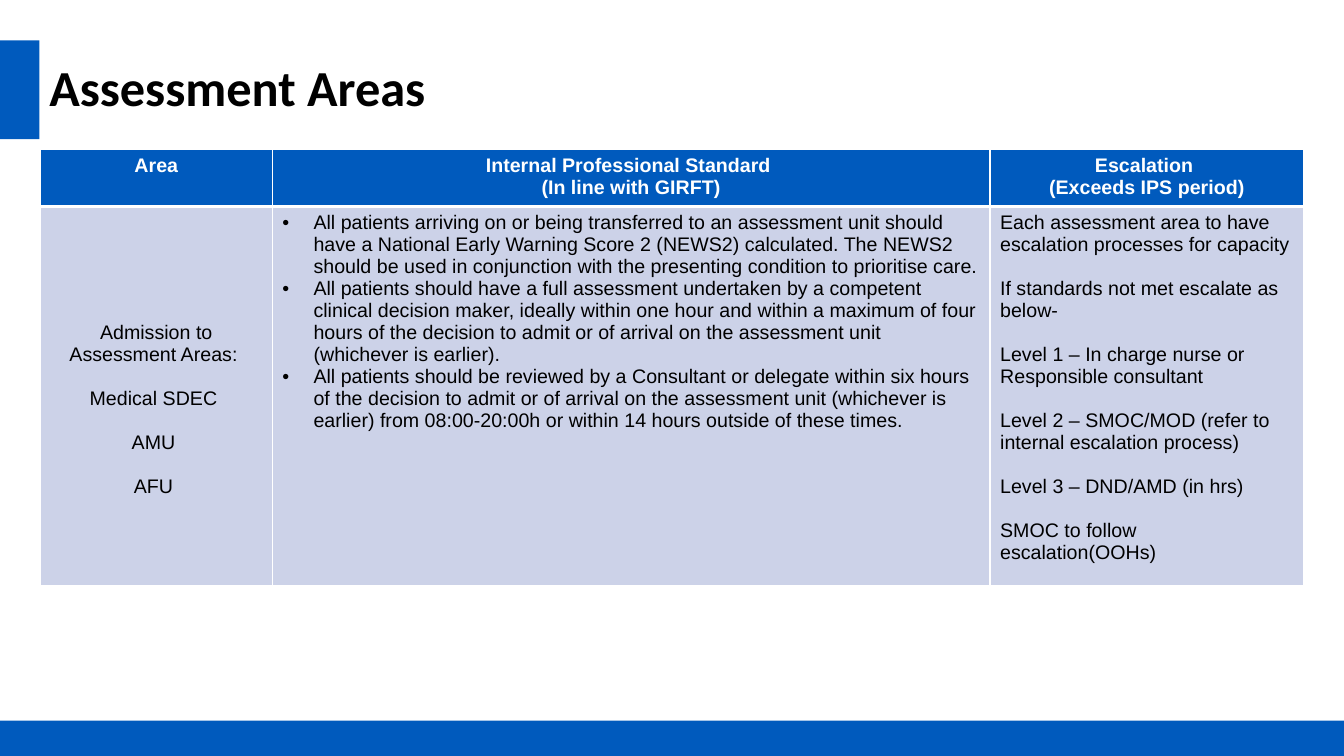
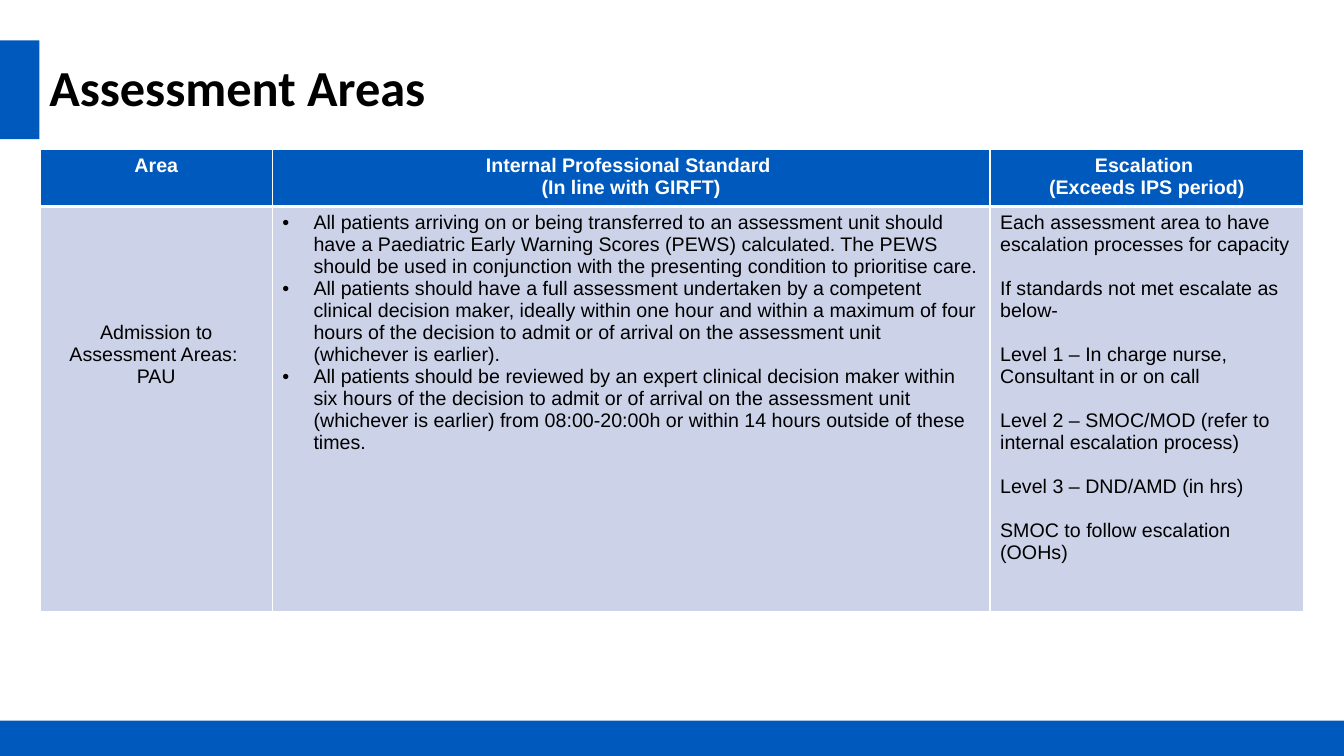
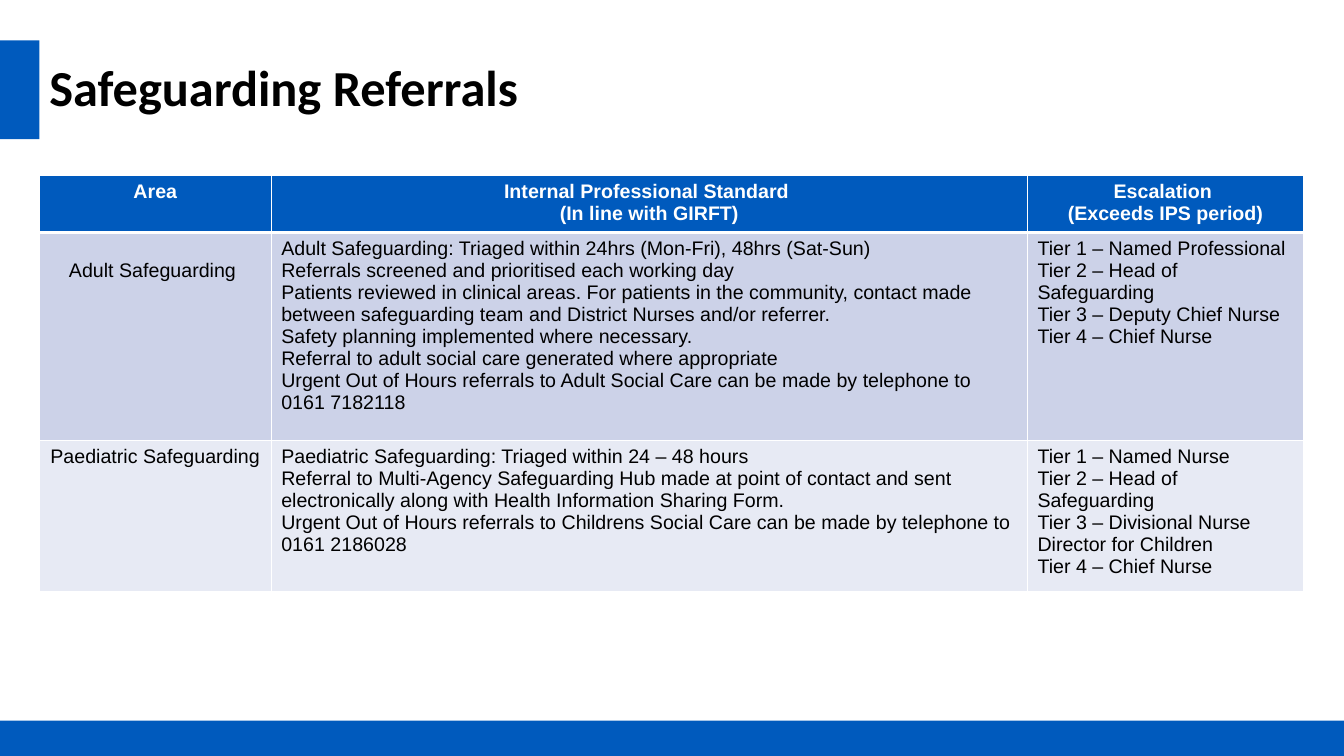
from dataclasses import dataclass
from lxml.etree import SubElement
from pptx import Presentation
from pptx.dml.color import RGBColor
from pptx.enum.shapes import MSO_SHAPE
from pptx.enum.text import MSO_ANCHOR, PP_ALIGN
from pptx.oxml.ns import qn
from pptx.util import Inches, Pt

BLUE = RGBColor(0x00, 0x5A, 0xBD)
LILAC = RGBColor(0xCC, 0xD2, 0xE8)
PALE = RGBColor(0xE7, 0xEA, 0xF4)
WHITE = RGBColor(0xFF, 0xFF, 0xFF)
BLACK = RGBColor(0x00, 0x00, 0x00)

SLIDE_W, SLIDE_H = 13.33, 7.5
TITLE_TOP, TITLE_H = 0.4, 0.98
TAB_W = 0.39
FOOTER_H = 0.35
HEADER_H = 0.54
LINE_PT = 15.75
INSET = 0.05
INDENT = 0.31


@dataclass
class Entry:
    lines: list
    centred: bool = False
    bulleted: bool = False
    spaced: bool = False
    lines_down: int = 0


HEADER = [
    Entry(["Area"], centred=True),
    Entry(["Internal Professional Standard ", "(In line with GIRFT)"], centred=True),
    Entry(["Escalation ", "(Exceeds IPS period)"], centred=True),
]


def add_run(p, text, size, font, color, bold):
    r = p.add_run()
    r.text = text
    r.font.size = Pt(size)
    r.font.name = font
    r.font.color.rgb = color
    r.font.bold = bold


def add_band(slide, left, top, width, height):
    sp = slide.shapes.add_shape(MSO_SHAPE.RECTANGLE, Inches(left), Inches(top),
                                Inches(width), Inches(height))
    sp.shadow.inherit = False
    sp.fill.solid()
    sp.fill.fore_color.rgb = BLUE
    sp.line.fill.background()


def add_titled_slide(prs, title):
    slide = prs.slides.add_slide(prs.slide_layouts[6])
    add_band(slide, 0, TITLE_TOP, TAB_W, TITLE_H)
    add_band(slide, 0, SLIDE_H - FOOTER_H, SLIDE_W, FOOTER_H)
    box = slide.shapes.add_textbox(Inches(TAB_W), Inches(TITLE_TOP),
                                   Inches(10.78), Inches(TITLE_H))
    tf = box.text_frame
    tf.word_wrap = True
    tf.vertical_anchor = MSO_ANCHOR.MIDDLE
    p = tf.paragraphs[0]
    p.line_spacing = 0.9
    add_run(p, title, 36, "Calibri", BLACK, True)
    return slide


def set_borders(cell, bottom_pt):
    tcPr = cell._tc.get_or_add_tcPr()
    for side, width in (("L", 1), ("R", 1), ("T", 1), ("B", bottom_pt)):
        ln = SubElement(tcPr, qn(f"a:ln{side}"), w=str(Pt(width)))
        fill = SubElement(ln, qn("a:solidFill"))
        SubElement(fill, qn("a:srgbClr"), val=str(WHITE))


def set_bullet(p):
    pPr = p._p.get_or_add_pPr()
    pPr.set("marL", str(Inches(INDENT)))
    pPr.set("indent", str(-Inches(INDENT)))
    SubElement(pPr, qn("a:buFont"), typeface="Arial")
    SubElement(pPr, qn("a:buChar"), char="•")


def fill_cell(cell, entry, fill, is_header):
    set_borders(cell, 3 if is_header else 1)
    cell.fill.solid()
    cell.fill.fore_color.rgb = fill
    cell.margin_top = Inches(INSET) + Pt(LINE_PT * entry.lines_down)
    tf = cell.text_frame
    for i, line in enumerate(entry.lines):
        p = tf.add_paragraph() if i else tf.paragraphs[0]
        p.alignment = PP_ALIGN.CENTER if entry.centred else PP_ALIGN.LEFT
        if entry.spaced and i:
            p.space_before = Pt(LINE_PT)
        if entry.bulleted:
            set_bullet(p)
        add_run(p, line, 14, "Arial", WHITE if is_header else BLACK, is_header)


def add_standards_table(slide, left, top, col_widths, body_heights, body):
    heights = [HEADER_H, *body_heights]
    frame = slide.shapes.add_table(len(heights), len(col_widths), Inches(left), Inches(top),
                                   Inches(sum(col_widths)), Inches(sum(heights)))
    table = frame.table
    table.horz_banding = False
    for col, width in zip(table.columns, col_widths):
        col.width = Inches(width)
    fills = [BLUE, LILAC, PALE]
    for n, entries in enumerate([HEADER, *body]):
        table.rows[n].height = Inches(heights[n])
        for cell, entry in zip(table.rows[n].cells, entries):
            fill_cell(cell, entry, fills[n], n == 0)


def assessment_standards(score, score_short, reviewer):
    return Entry([
        "All patients arriving on or being transferred to an assessment unit should have a "
        f"{score} ({score_short}) calculated. The {score_short} should be used in conjunction "
        "with the presenting condition to prioritise care.",
        "All patients should have a full assessment undertaken by a competent clinical decision "
        "maker, ideally within one hour and within a maximum of four hours of the decision to "
        "admit or of arrival on the assessment unit (whichever is earlier).",
        f"All patients should be reviewed by {reviewer} within six hours of the decision to "
        "admit or of arrival on the assessment unit (whichever is earlier) from 08:00-20:00h "
        "or within 14 hours outside of these times.",
    ], bulleted=True)


def assessment_escalation(level_1, out_of_hours):
    return Entry([
        "Each assessment area to have escalation processes for capacity",
        "If standards not met escalate as below-",
        f"Level 1 – {level_1}",
        "Level 2 – SMOC/MOD (refer to internal escalation process)",
        "Level 3 – DND/AMD (in hrs)",
        f"SMOC to follow {out_of_hours}",
    ], spaced=True)


def add_assessment_slide(prs, body_height, areas, standards, escalation):
    slide = add_titled_slide(prs, "Assessment Areas")
    add_standards_table(slide, 0.4, 1.48, [2.3, 7.12, 3.11], [body_height],
                        [[areas, standards, escalation]])


def add_safeguarding_slide(prs):
    slide = add_titled_slide(prs, "Safeguarding Referrals")
    adult = [
        Entry(["Adult Safeguarding "], centred=True, lines_down=1),
        Entry([
            "Adult Safeguarding: Triaged within 24hrs (Mon-Fri), 48hrs (Sat-Sun)",
            "Referrals screened and prioritised each working day",
            "Patients reviewed in clinical areas. For patients in the community, contact made "
            "between safeguarding team and District Nurses and/or referrer.",
            "Safety planning implemented where necessary.",
            "Referral to adult social care generated where appropriate",
            "Urgent Out of Hours referrals to Adult Social Care can be made by telephone to "
            "0161 7182118",
        ]),
        Entry([
            "Tier 1 – Named Professional",
            "Tier 2 – Head of Safeguarding",
            "Tier 3 – Deputy Chief Nurse",
            "Tier 4 – Chief Nurse",
        ]),
    ]
    paediatric = [
        Entry(["Paediatric Safeguarding"], centred=True),
        Entry([
            "Paediatric Safeguarding: Triaged within 24 – 48 hours",
            "Referral to Multi-Agency Safeguarding Hub made at point of contact and sent "
            "electronically along with Health Information Sharing Form.",
            "Urgent Out of Hours referrals to Childrens Social Care can be made by telephone to "
            "0161 2186028",
        ]),
        Entry([
            "Tier 1 – Named Nurse",
            "Tier 2 – Head of Safeguarding",
            "Tier 3 – Divisional Nurse Director for Children",
            "Tier 4 – Chief Nurse",
        ]),
    ]
    add_standards_table(slide, 0.39, 1.74, [2.3, 7.5, 2.74], [2.06, 1.41],
                        [adult, paediatric])


def main():
    prs = Presentation()
    prs.slide_width, prs.slide_height = Inches(SLIDE_W), Inches(SLIDE_H)
    admission = "Admission to Assessment Areas: "
    add_assessment_slide(
        prs, 3.59,
        Entry([admission, "Medical SDEC ", "AMU ", "AFU "],
              centred=True, spaced=True, lines_down=5),
        assessment_standards("National Early Warning Score 2", "NEWS2",
                             "a Consultant or delegate"),
        assessment_escalation("In charge nurse or Responsible consultant",
                              "escalation(OOHs)"))
    add_assessment_slide(
        prs, 4.02,
        Entry([admission, "PAU"], centred=True, lines_down=5),
        assessment_standards("Paediatric Early Warning Scores", "PEWS",
                             "an expert clinical decision maker"),
        assessment_escalation("In charge nurse, Consultant in or on call",
                              "escalation (OOHs)"))
    add_safeguarding_slide(prs)
    prs.save("out.pptx")


if __name__ == "__main__":
    main()
